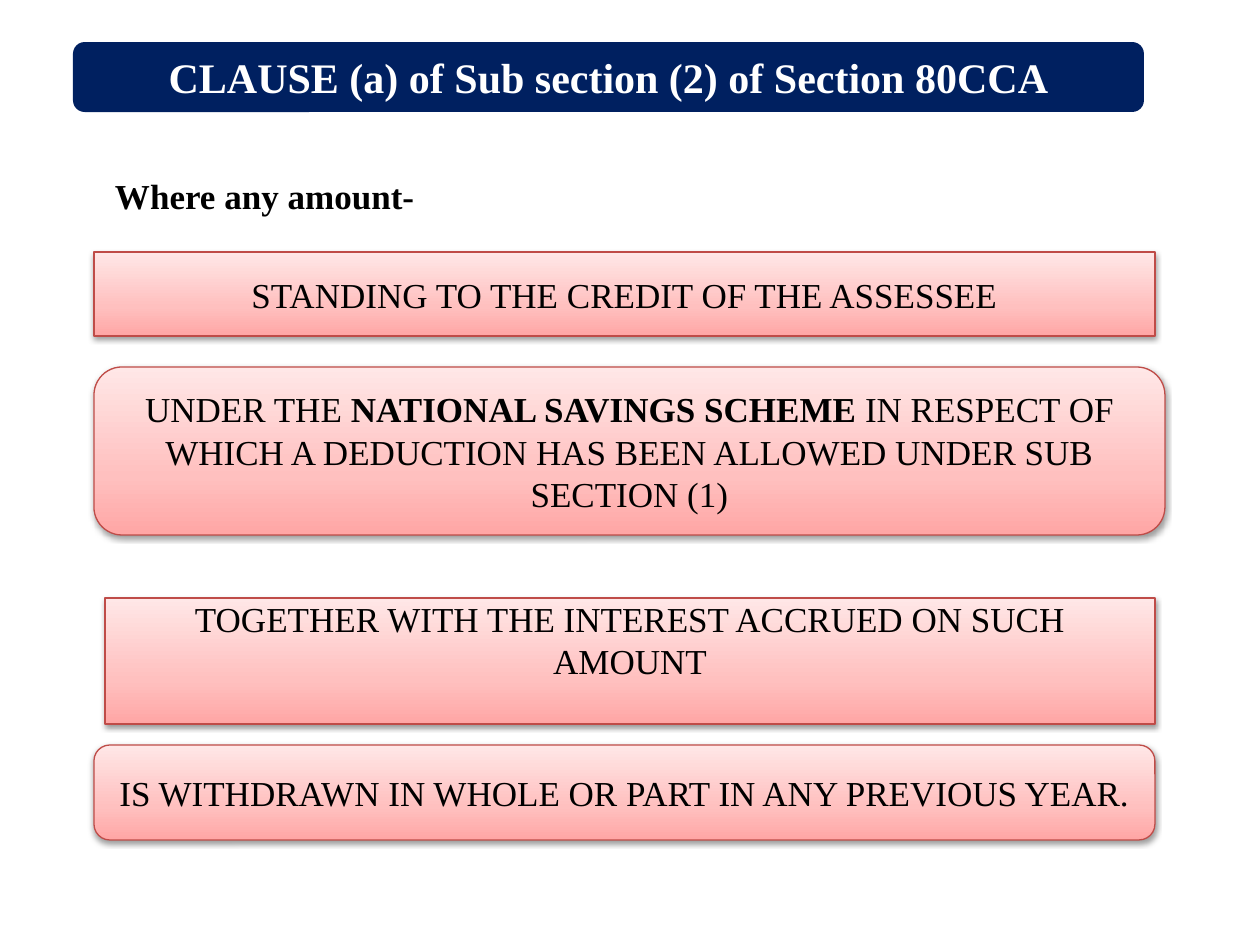
from lxml import etree
from pptx import Presentation
from pptx.dml.color import RGBColor
from pptx.enum.shapes import MSO_SHAPE
from pptx.enum.text import MSO_ANCHOR, PP_ALIGN
from pptx.oxml.ns import qn
from pptx.util import Emu, Pt

RECT, ROUNDED = MSO_SHAPE.RECTANGLE, MSO_SHAPE.ROUNDED_RECTANGLE
TOP, MIDDLE = MSO_ANCHOR.TOP, MSO_ANCHOR.MIDDLE
LEFT, CENTER = PP_ALIGN.LEFT, PP_ALIGN.CENTER

EMU_PER_PX = 914400 / 126
FONT = "Times New Roman"
COLORS = {
    "navy": "002060",
    "white": "FFFFFF",
    "black": "000000",
    "border": "BF4C48",
    "rose": "FFA6A5",
    "pink": "FFC0BF",
    "blush": "FFE7E7",
}
CARD_STOPS = ((0, "rose"), (35, "pink"), (100, "blush"))


def px(length):
    return Emu(round(length * EMU_PER_PX))


def rgb(name):
    return RGBColor.from_string(COLORS[name])


def add_color(parent, name):
    return etree.SubElement(parent, qn("a:srgbClr"), val=COLORS[name])


class SlideBuilder:
    def __init__(self, slide):
        self.shapes = slide.shapes

    def set_text(self, shape, runs, size, color, align, anchor):
        """Fill the shape with one paragraph of (text, bold) runs."""
        frame = shape.text_frame
        frame.word_wrap = True
        frame.vertical_anchor = anchor
        paragraph = frame.paragraphs[0]
        paragraph.alignment = align
        paragraph.font.name = FONT
        paragraph.font.size = Pt(size)
        paragraph.font.color.rgb = rgb(color)
        for text, bold in runs:
            run = paragraph.add_run()
            run.text = text
            run.font.bold = bold
        return frame

    def banner(self, box, text):
        shape = self.shapes.add_shape(ROUNDED, *map(px, box))
        shape.shadow.inherit = False
        shape.fill.solid()
        shape.fill.fore_color.rgb = rgb("navy")
        shape.line.fill.background()
        self.set_text(shape, [(text, True)], 24, "white", CENTER, TOP)

    def lead_in(self, box, text):
        label = self.shapes.add_textbox(*map(px, box))
        frame = self.set_text(label, [(text, True)], 20, "black", LEFT, TOP)
        frame.margin_left = px(21)

    def card(self, outline, box, runs, anchor=MIDDLE):
        shape = self.shapes.add_shape(outline, *map(px, box))
        shape.line.color.rgb = rgb("border")
        shape.line.width = Pt(0.75)
        self.shade(shape)
        self.drop_shadow(shape)
        frame = self.set_text(shape, runs, 20, "black", CENTER, anchor)
        if anchor == TOP:
            frame.margin_top = 0

    def shade(self, shape):
        """Apply the three-stop vertical gradient, lightest at the top."""
        gradient = etree.Element(qn("a:gradFill"), rotWithShape="1")
        stops = etree.SubElement(gradient, qn("a:gsLst"))
        for percent, name in CARD_STOPS:
            stop = etree.SubElement(stops, qn("a:gs"), pos=str(percent * 1000))
            add_color(stop, name)
        etree.SubElement(gradient, qn("a:lin"), ang="16200000", scaled="1")
        shape._element.spPr.find(qn("a:prstGeom")).addnext(gradient)

    def drop_shadow(self, shape):
        shape.shadow.inherit = False
        effects = shape._element.spPr.find(qn("a:effectLst"))
        shadow = etree.SubElement(
            effects, qn("a:outerShdw"), blurRad="40000", dist="20000",
            dir="5400000", rotWithShape="0")
        etree.SubElement(add_color(shadow, "black"), qn("a:alpha"), val="38000")


def main():
    deck = Presentation()
    deck.slide_width, deck.slide_height = px(1260), px(945)
    builder = SlideBuilder(deck.slides.add_slide(deck.slide_layouts[6]))

    builder.banner((73, 42, 1071, 70),
                   "CLAUSE (a) of Sub section (2) of Section 80CCA")
    builder.lead_in((94, 168, 1050, 97), "Where any amount-")
    builder.card(RECT, (94, 252, 1061, 84),
                 [("STANDING TO THE CREDIT OF THE ASSESSEE", False)])
    builder.card(ROUNDED, (94, 367, 1071, 168), [
        ("UNDER THE ", False),
        ("NATIONAL SAVINGS SCHEME", True),
        (" IN RESPECT OF WHICH A DEDUCTION HAS BEEN ALLOWED"
         " UNDER SUB SECTION (1)", False),
    ])
    builder.card(RECT, (105, 598, 1050, 126),
                 [("TOGETHER WITH THE INTEREST ACCRUED ON SUCH AMOUNT", False)],
                 anchor=TOP)
    builder.card(ROUNDED, (94, 745, 1061, 95),
                 [("IS WITHDRAWN IN WHOLE OR PART IN ANY PREVIOUS YEAR.", False)])

    deck.save("out.pptx")


if __name__ == "__main__":
    main()
